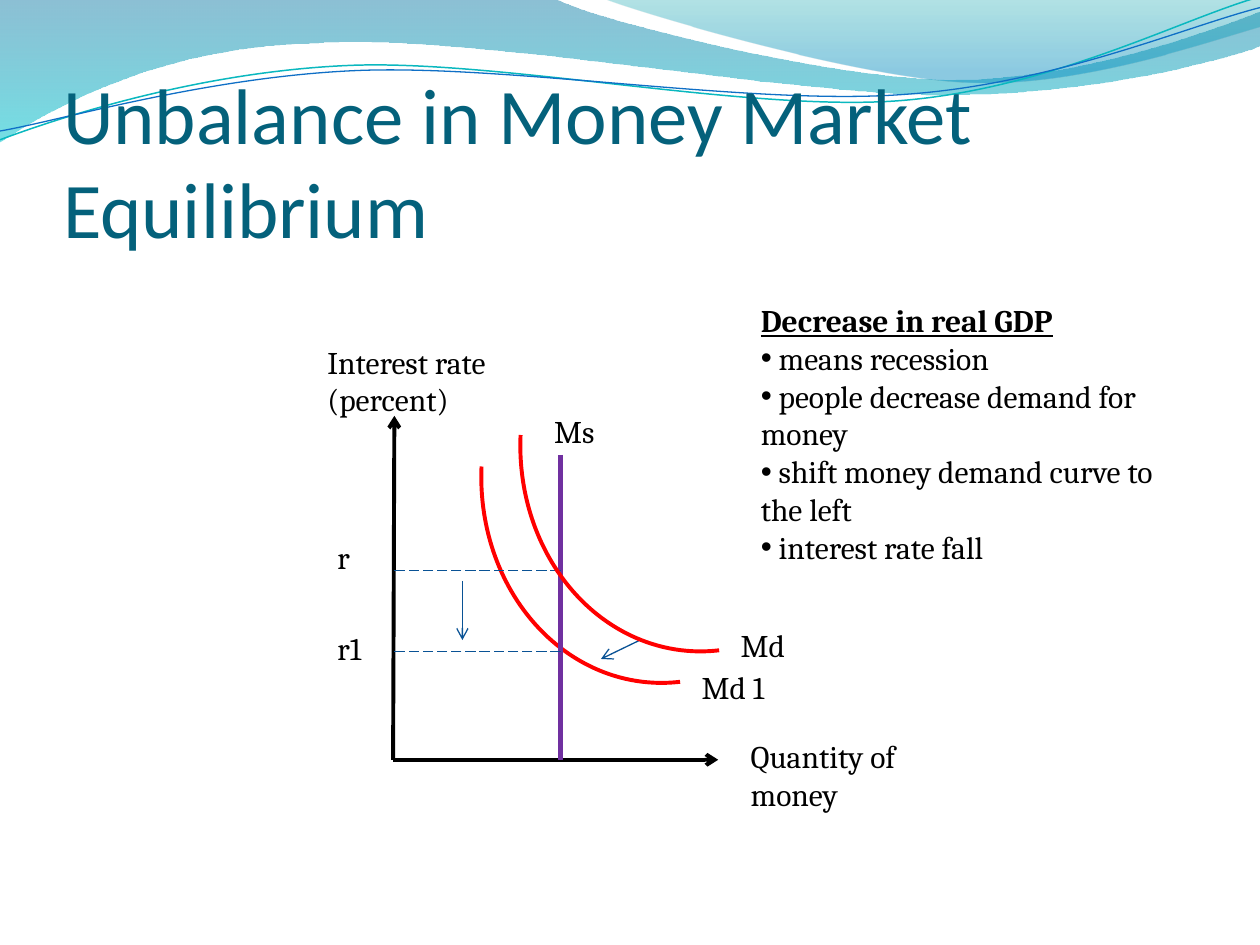
from dataclasses import dataclass
from math import cos, radians, sin
from typing import NamedTuple

from lxml.etree import SubElement
from pptx import Presentation
from pptx.dml.color import RGBColor
from pptx.enum.dml import MSO_LINE as Dash
from pptx.enum.shapes import MSO_CONNECTOR as Link, MSO_SHAPE as Preset
from pptx.enum.text import MSO_ANCHOR as Anchor, MSO_AUTO_SIZE as Fit
from pptx.oxml.ns import qn
from pptx.util import Emu, Inches, Pt

COLUMNS, ROWS = 10, 7.5
CELL = Inches(1)
Point = tuple[float, float]


@dataclass(frozen=True)
class Theme:
    title: str = "04617B"
    body: str = "000000"
    axis: str = "000000"
    demand: str = "FF0000"
    supply: str = "7030A0"
    guide: str = "095295"
    crest: str = "0AB8BF"
    ripple: str = "0F6FC6"
    title_font: str = "Calibri"
    body_font: str = "Cambria"
    title_size: float = 45
    body_size: float = 18
    thin: float = 0.75
    medium: float = 2.25
    thick: float = 3


THEME = Theme()


class Stop(NamedTuple):
    position: float
    color: str
    opacity: int


class Wave(NamedTuple):
    box: tuple[float, float, float, float]
    start: Point
    curves: list[tuple[Point, ...]]
    stops: tuple[Stop, ...] = ()
    color: str = ""
    width: float = 0
    tilt: float = 0


class Label(NamedTuple):
    text: str
    left: float
    top: float
    width: float
    height: float = 0.4


class Segment(NamedTuple):
    start: Point
    end: Point
    color: str
    width: float
    arrow: bool = False
    dashed: bool = False


def cells(count: float) -> Emu:
    return Emu(round(count * CELL))


def place(point: Point, wave: Wave) -> tuple[Emu, Emu]:
    left, top, width, height = wave.box
    angle = radians(-wave.tilt)
    dx, dy = point[0] - left - width / 2, point[1] - top - height / 2
    return (cells(width / 2 + dx * cos(angle) - dy * sin(angle)),
            cells(height / 2 + dx * sin(angle) + dy * cos(angle)))


def outline(slide, wave: Wave):
    left, top, width, height = [cells(value) for value in wave.box]
    builder = slide.shapes.build_freeform(left, top)
    builder.add_line_segments([(left + width, top + height)], close=False)
    shape = builder.convert_to_shape()
    contour = next(shape._element.iter(qn("a:path")))
    for child in list(contour):
        contour.remove(child)
    contour.set("w", str(width))
    contour.set("h", str(height))
    steps = [("a:moveTo", (wave.start,))]
    steps += [("a:lnTo" if len(curve) == 1 else "a:cubicBezTo", curve) for curve in wave.curves]
    for tag, points in steps:
        step = SubElement(contour, qn(tag))
        for point in points:
            x, y = place(point, wave)
            SubElement(step, qn("a:pt"), x=str(x), y=str(y))
    if wave.stops:
        SubElement(contour, qn("a:close"))
    shape.rotation = wave.tilt
    shape.shadow.inherit = False
    return shape


def draw_wave(slide, wave: Wave) -> None:
    shape = outline(slide, wave)
    if not wave.stops:
        shape.fill.background()
        shape.line.color.rgb = RGBColor.from_string(wave.color)
        shape.line.width = Pt(wave.width)
        return
    shape.line.fill.background()
    shape.fill.gradient()
    shape.fill.gradient_angle = 270
    for target, stop in zip(shape.fill.gradient_stops, wave.stops):
        target.position = stop.position
        target.color.rgb = RGBColor.from_string(stop.color)
    for tint, stop in zip(shape.fill._xPr.iter(qn("a:srgbClr")), wave.stops):
        SubElement(tint, qn("a:alpha"), val=str(stop.opacity * 1000))


def draw_segment(slide, segment: Segment) -> None:
    ends = [cells(value) for value in (*segment.start, *segment.end)]
    connector = slide.shapes.add_connector(Link.STRAIGHT, *ends)
    connector.line.color.rgb = RGBColor.from_string(segment.color)
    connector.line.width = Pt(segment.width)
    if segment.dashed:
        connector.line.dash_style = Dash.LONG_DASH
    if segment.arrow:
        SubElement(connector.line._get_or_add_ln(), qn("a:tailEnd"), type="arrow")
    SubElement(connector._element.spPr, qn("a:effectLst"))


def draw_demand(slide, left: float, top: float) -> None:
    curve = slide.shapes.add_shape(Preset.ARC, cells(left), cells(top), cells(2.89), cells(3.31))
    curve.adjustments[0] = 157.74
    curve.rotation = 182.5
    curve.shadow.inherit = False
    curve.fill.background()
    curve.line.color.rgb = RGBColor.from_string(THEME.demand)
    curve.line.width = Pt(THEME.medium)


def write(slide, label: Label, *, font: str = THEME.body_font, size: float = THEME.body_size,
          color: str = THEME.body, anchor: Anchor = Anchor.TOP, inset: float = 0.1,
          bottom: float = 0.05, fit: Fit = Fit.SHAPE_TO_FIT_TEXT, heading: bool = False) -> None:
    frame = slide.shapes.add_textbox(*[cells(value) for value in label[1:]]).text_frame
    frame.word_wrap = True
    frame.auto_size = fit
    frame.vertical_anchor = anchor
    frame.margin_left = frame.margin_right = cells(inset)
    frame.margin_bottom = cells(bottom)
    for index, line in enumerate(label.text.split("\n")):
        paragraph = frame.paragraphs[0] if index == 0 else frame.add_paragraph()
        run = paragraph.add_run()
        run.text = line
        run.font.name, run.font.size = font, Pt(size)
        run.font.color.rgb = RGBColor.from_string(color)
        if heading and index == 0:
            run.font.bold = run.font.underline = True
        elif heading:
            properties = paragraph._p.get_or_add_pPr()
            SubElement(properties, qn("a:buFont"), typeface="Arial")
            SubElement(properties, qn("a:buChar"), char="•")


WAVES = [
    Wave((-0.01, -0.01, 10.02, 1.14), (0, 0),
         [((4.4, -0.01),), ((4.76, 0.17), (6.64, 0.63), (7.58, 0.63)),
          ((8.53, 0.63), (9.58, 0.26), (10, 0.09)), ((10.01, 0.36),),
          ((9.83, 0.44), (8.7, 0.76), (7.46, 0.75)), ((6.22, 0.75), (3.82, 0.28), (2.57, 0.34)),
          ((1.29, 0.36), (0.46, 0.83), (-0.01, 1.13)), ((0, 0),)],
         stops=(Stop(0, "0074A1", 45), Stop(1, "00C6CF", 55))),
    Wave((4.79, -0.01, 5.21, 0.7), (4.79, -0.01),
         [((5.09, 0.11), (6.82, 0.62), (7.69, 0.65)), ((8.56, 0.69), (9.61, 0.32), (10, 0.21)),
          ((10, 0),), ((4.79, -0.01),)],
         stops=(Stop(0, "00A1A9", 30), Stop(0.8, "008BBF", 45))),
    Wave((-0.02, 0.22, 10.02, 0.71), (0, 1.11),
         [((0.48, 0.93), (1.58, 0.57), (2.77, 0.52)), ((3.95, 0.47), (5.93, 0.89), (7.13, 0.8)),
          ((8.33, 0.71), (9.38, 0.15), (9.98, -0.02))], color=THEME.crest, width=0.85, tilt=357.3),
    Wave((-0.02, 0.3, 10.03, 0.58), (0, 1.04),
         [((0.47, 0.96), (1.64, 0.61), (2.83, 0.56)), ((4.03, 0.51), (5.97, 0.84), (7.17, 0.75)),
          ((8.36, 0.67), (9.41, 0.21), (10, 0.06))], color=THEME.ripple, width=THEME.thin, tilt=357.3),
]
ORIGIN = AXIS_X, AXIS_Y = 3.12, 6.03
SUPPLY_X = 4.45
RATES = 4.53, 5.17
SEGMENTS = [
    Segment(ORIGIN, (3.13, 3.3), THEME.axis, THEME.medium, arrow=True),
    Segment(ORIGIN, (5.7, AXIS_Y), THEME.axis, THEME.medium, arrow=True),
    Segment((SUPPLY_X, 3.61), (SUPPLY_X, AXIS_Y), THEME.supply, THEME.thick),
    *[Segment((SUPPLY_X, rate), (AXIS_X, rate), THEME.guide, THEME.thin, dashed=True) for rate in RATES],
    Segment((5.08, 5.08), (4.77, 5.23), THEME.guide, THEME.thin, arrow=True),
    Segment((3.67, 4.61), (3.67, 5.08), THEME.guide, THEME.thin, arrow=True),
]
LABELS = [
    Label("Interest rate (percent)", 2.5, 2.67, 1.64, 0.71),
    Label("Quantity of money", 5.86, 5.8, 1.56, 0.71),
    Label("Ms", 4.3, 3.22, 0.7),
    Label("Md 1", 5.47, 5.25, 1.02),
    Label("r1", 2.58, 4.94, 0.63),
    Label("r", 2.58, 4.22, 0.86),
    Label("Md", 5.78, 4.92, 0.94),
]
TITLE = Label("Unbalance in Money Market Equilibrium", 0.5, 0.77, 9.08, 1.25)
EFFECTS = Label("Decrease in real GDP\n means recession\n people decrease demand for money\n"
                " shift money demand curve to the left\n interest rate fall", 5.94, 2.34, 3.36, 2.52)


def main() -> None:
    deck = Presentation()
    deck.slide_width, deck.slide_height = cells(COLUMNS), cells(ROWS)
    slide = deck.slides.add_slide(deck.slide_layouts[6])
    for wave in WAVES:
        draw_wave(slide, wave)
    write(slide, TITLE, font=THEME.title_font, size=THEME.title_size, color=THEME.title,
          anchor=Anchor.BOTTOM, inset=0, bottom=0, fit=Fit.NONE)
    draw_demand(slide, 3.82, 2.11)
    for segment in SEGMENTS:
        draw_segment(slide, segment)
    draw_demand(slide, 4.13, 1.86)
    for label in LABELS:
        write(slide, label)
    write(slide, EFFECTS, heading=True)
    deck.save("out.pptx")


if __name__ == "__main__":
    main()
